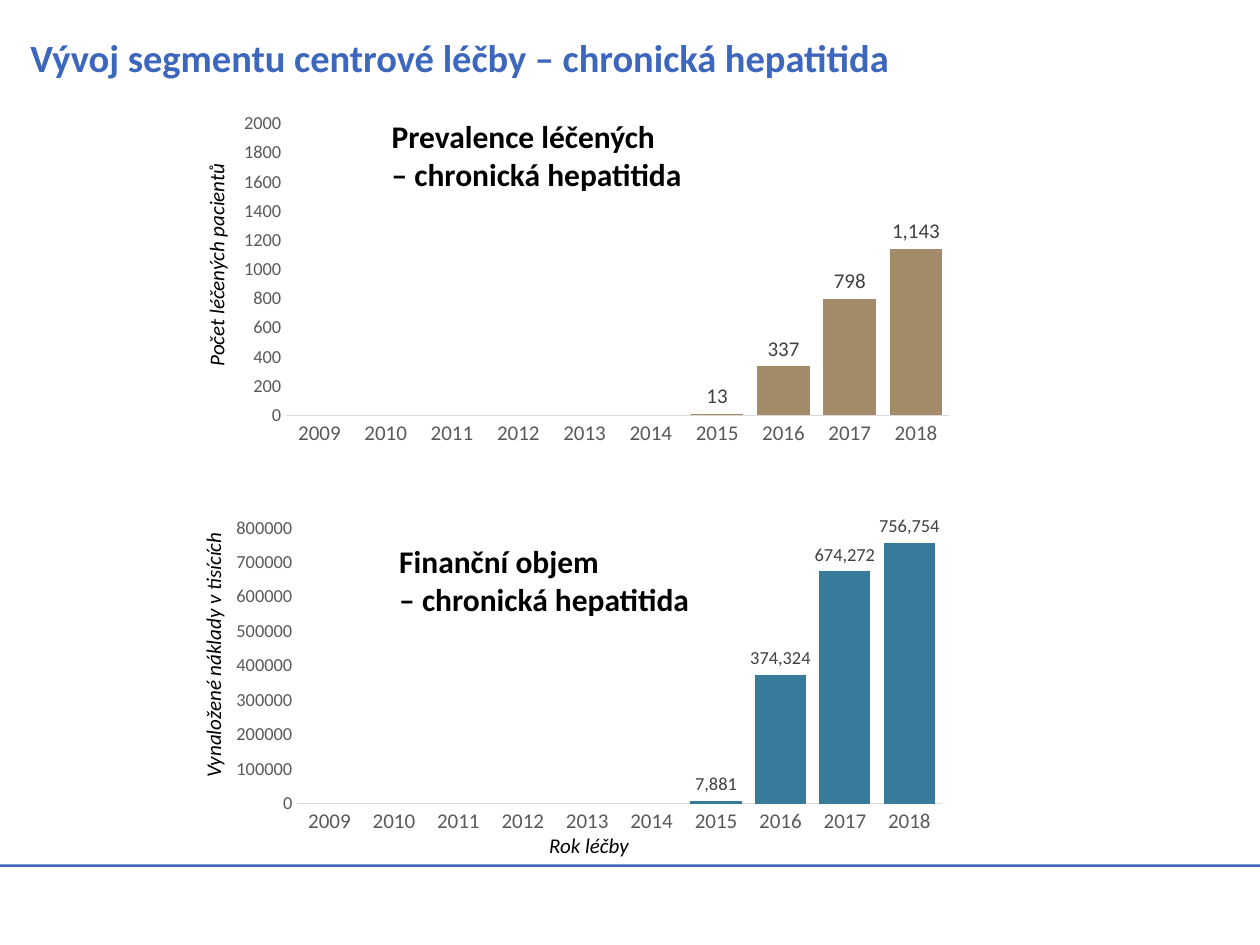
import pptx
import pptx.chart.data
import pptx.dml.color
import pptx.enum.chart
import pptx.enum.shapes
import pptx.enum.text
import pptx.util
from pptx.util import Inches

FONT = "Calibri"
BLUE = "3D67BC"
BLACK = "000000"
GREY = "595959"
YEARS = [str(year) for year in range(2009, 2019)]
UNTREATED_YEARS = [None] * 6


def colour(hex_string):
    """Return the RGB colour for a hex string."""
    return pptx.dml.color.RGBColor.from_string(hex_string)


def style_font(font, size, hex_string, bold=False, italic=False):
    """Set typeface, size, colour and style of a font."""
    font.name = FONT
    font.size = pptx.util.Pt(size)
    font.color.rgb = colour(hex_string)
    font.bold = bold
    font.italic = italic


def add_text(slide, box, lines, size, bold=False, italic=False, rotation=0):
    """Add a text box with one paragraph for each line."""
    shape = slide.shapes.add_textbox(*map(Inches, box))
    shape.rotation = rotation
    frame = shape.text_frame
    frame.word_wrap = True
    for index, line in enumerate(lines):
        paragraph = frame.add_paragraph() if index else frame.paragraphs[0]
        run = paragraph.add_run()
        run.text = line
        style_font(run.font, size, BLACK, bold, italic)


def add_title(slide, box, text):
    """Place and format the slide title."""
    title = slide.shapes.title
    title.left, title.top, title.width, title.height = map(Inches, box)
    frame = title.text_frame
    frame.word_wrap = True
    frame.auto_size = pptx.enum.text.MSO_AUTO_SIZE.NONE
    frame.vertical_anchor = pptx.enum.text.MSO_ANCHOR.MIDDLE
    paragraph = frame.paragraphs[0]
    paragraph.alignment = pptx.enum.text.PP_ALIGN.LEFT
    run = paragraph.add_run()
    run.text = text
    style_font(run.font, 22, BLUE, bold=True)


def add_footer_rule(slide, box):
    """Draw the thin blue rule above the footer."""
    rule = slide.shapes.add_shape(pptx.enum.shapes.MSO_SHAPE.RECTANGLE, *map(Inches, box))
    rule.shadow.inherit = False
    rule.fill.solid()
    rule.fill.fore_color.rgb = colour(BLUE)
    rule.line.fill.background()


def style_axis(axis, size):
    """Give an axis plain labels without ticks or gridlines."""
    axis.has_major_gridlines = False
    axis.major_tick_mark = pptx.enum.chart.XL_TICK_MARK.NONE
    axis.minor_tick_mark = pptx.enum.chart.XL_TICK_MARK.NONE
    style_font(axis.tick_labels.font, size, GREY)


def add_column_chart(slide, box, values, fill, label_size, maximum=None):
    """Add a yearly column chart with value labels."""
    data = pptx.chart.data.CategoryChartData()
    data.categories = YEARS
    data.add_series("Series 1", UNTREATED_YEARS + values)
    chart = slide.shapes.add_chart(
        pptx.enum.chart.XL_CHART_TYPE.COLUMN_CLUSTERED, *map(Inches, box), data
    ).chart
    chart.has_title = False
    chart.has_legend = False
    style_font(chart.font, 10, BLACK)

    style_axis(chart.category_axis, 12)
    axis_line = chart.category_axis.format.line
    axis_line.color.rgb = colour("D9D9D9")
    axis_line.width = pptx.util.Pt(0.75)
    style_axis(chart.value_axis, 10.5)
    chart.value_axis.format.line.fill.background()
    chart.value_axis.minimum_scale = 0
    if maximum:
        chart.value_axis.maximum_scale = maximum

    plot = chart.plots[0]
    plot.gap_width = 26
    plot.overlap = 23
    plot.vary_by_categories = False
    series = plot.series[0]
    series.format.fill.solid()
    series.format.fill.fore_color.rgb = colour(fill)
    labels = series.data_labels
    labels.show_value = True
    labels.number_format = "#,##0"
    labels.number_format_is_linked = False
    labels.position = pptx.enum.chart.XL_LABEL_POSITION.OUTSIDE_END
    style_font(labels.font, label_size, "404040")


def add_panel(slide, box, heading, heading_offset, axis_title, axis_box, **chart_options):
    """Add a chart with its heading and rotated axis title, offset from the box corner."""
    left, top, _, _ = box
    add_column_chart(slide, box, **chart_options)
    heading_left, heading_top = heading_offset
    add_text(slide, (left + heading_left, top + heading_top, 2.72, 0.71),
             [heading, "– chronická hepatitida"], 18, bold=True)
    axis_left, axis_top, width, height = axis_box
    add_text(slide, (left + axis_left, top + axis_top, width, height),
             [axis_title], 12, italic=True, rotation=270)


def main():
    """Build and save the presentation."""
    presentation = pptx.Presentation()
    presentation.slide_width = Inches(10)
    presentation.slide_height = Inches(7.5)
    slide = presentation.slides.add_slide(presentation.slide_layouts[5])
    add_footer_rule(slide, (0, 6.86, 10, 0.02))
    add_title(slide, (0.14, 0.09, 9.69, 0.72),
              "Vývoj segmentu centrové léčby – chronická hepatitida")
    add_panel(slide, (1.82, 0.84, 5.83, 2.75), "Prevalence léčených", (1.19, 0.04),
              "Počet léčených pacientů", (-1.13, 1.02, 2.02, 0.27),
              values=[13, 337, 798, 1143], fill="A38B69", label_size=12, maximum=2000)
    add_panel(slide, (1.76, 4.05, 5.83, 2.62), "Finanční objem", (1.31, 0.2),
              "Vynaložené náklady v tisících", (-1.16, 0.99, 2.17, 0.29),
              values=[7881, 374324, 674272, 756754], fill="367B9A", label_size=10.5)
    add_text(slide, (4.26, 6.56, 2.94, 0.31), ["Rok léčby"], 12, italic=True)
    presentation.save("out.pptx")


if __name__ == "__main__":
    main()
